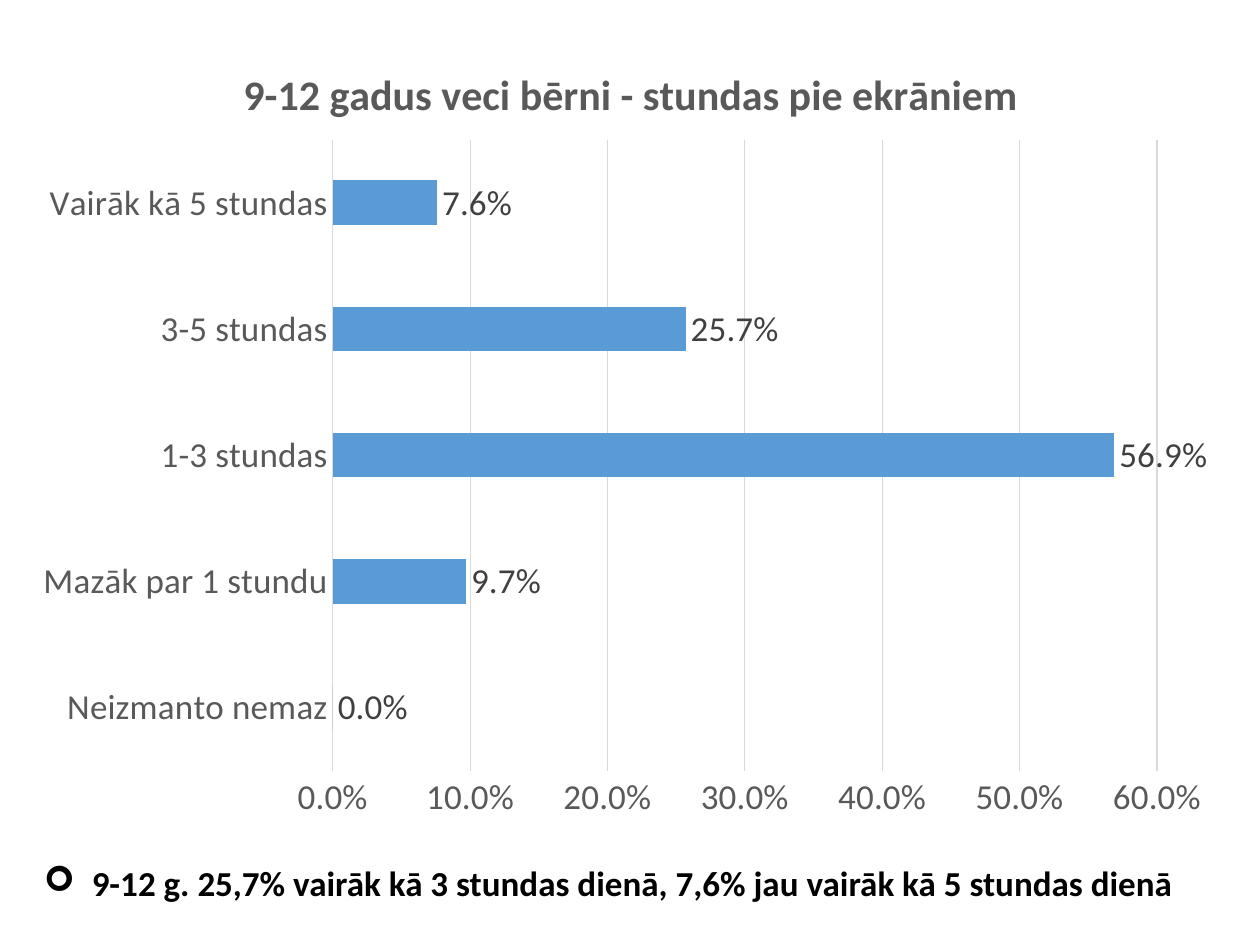
from dataclasses import dataclass

from lxml import etree
from pptx import Presentation
from pptx import util as u
from pptx.chart.data import CategoryChartData
from pptx.dml.color import RGBColor
from pptx.enum import chart as ch
from pptx.enum import text
from pptx.oxml import parse_xml
from pptx.oxml.ns import nsdecls, qn


@dataclass(frozen=True)
class Theme:
    face: str = "Calibri"
    head: int = 24
    body: int = 20
    ink: str = "000000"
    gray: str = "595959"
    dark: str = "404040"
    rule: str = "D9D9D9"
    bar: str = "5B9BD5"


class Deck:
    """Holds the style and the current slide."""

    def __init__(self, slide, theme):
        self.slide = slide
        self.theme = theme

    def style(self, font, size, color, bold=False):
        font.name = self.theme.face
        font.size = u.Pt(size)
        font.bold = bold
        font.color.rgb = RGBColor.from_string(color)

    def rule(self, line):
        line.color.rgb = RGBColor.from_string(self.theme.rule)
        line.width = u.Pt(0.75)

    def place(self, part, **spots):
        """Give a chart title or plot area a manual layout."""
        for old in part.findall(qn("c:layout")):
            part.remove(old)
        tags = "".join(f'<c:{k} val="{v}"/>' for k, v in spots.items())
        node = parse_xml(f'<c:layout {nsdecls("c")}><c:manualLayout>'
                         f"{tags}</c:manualLayout></c:layout>")
        prior = part.find(qn("c:tx"))
        part.insert(0 if prior is None else 1, node)

    def bars(self, box, title, rows, form):
        t = self.theme
        data = CategoryChartData(number_format=form)
        data.categories = [name for name, _ in rows]
        data.add_series("Series 1", [val for _, val in rows])
        chart = self.slide.shapes.add_chart(
            ch.XL_CHART_TYPE.BAR_CLUSTERED, *map(u.Inches, box), data).chart
        self.style(chart.font, t.body, t.ink)
        chart.has_legend = False

        # Title
        run = chart.chart_title.text_frame.paragraphs[0].add_run()
        run.text = title
        self.style(run.font, t.head, t.gray, True)
        root = chart.chart_title._element
        self.place(root, xMode="edge", yMode="edge", x=0.18, y=0.04)

        # Axes
        cat, val = chart.category_axis, chart.value_axis
        for axis in (cat, val):
            axis.major_tick_mark = ch.XL_TICK_MARK.NONE
            axis.minor_tick_mark = ch.XL_TICK_MARK.NONE
            self.style(axis.tick_labels.font, t.body, t.gray)
        self.rule(cat.format.line)
        val.format.line.fill.background()
        val.minimum_scale, val.maximum_scale, val.major_unit = 0, 0.6, 0.1
        val.has_major_gridlines = True
        self.rule(val.major_gridlines.format.line)
        val.tick_labels.number_format = form
        val.tick_labels.number_format_is_linked = False

        # Bars and their labels
        plot = chart.plots[0]
        plot.gap_width = 182
        plot.vary_by_categories = False
        fill = plot.series[0].format.fill
        fill.solid()
        fill.fore_color.rgb = RGBColor.from_string(t.bar)
        tags = plot.series[0].data_labels
        tags.show_value = True
        tags.position = ch.XL_LABEL_POSITION.OUTSIDE_END
        tags.number_format = form
        tags.number_format_is_linked = False
        self.style(tags.font, t.body, t.dark)
        area = chart._chartSpace.chart.plotArea
        self.place(area, layoutTarget="inner", xMode="edge", yMode="edge",
                   x=0.26, y=0.14, w=0.68, h=0.78)

    def note(self, box, words):
        t = self.theme
        frame = self.slide.shapes.add_textbox(*map(u.Inches, box)).text_frame
        frame.word_wrap = True
        frame.auto_size = text.MSO_AUTO_SIZE.SHAPE_TO_FIT_TEXT
        para = frame.paragraphs[0]
        run = para.add_run()
        run.text = words
        self.style(run.font, t.body, t.ink, True)
        # Hanging arrow bullet
        props = para._p.get_or_add_pPr()
        hang = u.Inches(0.38)
        props.set("marL", str(hang))
        props.set("indent", str(-hang))
        etree.SubElement(props, qn("a:buFont")).set("typeface", "Wingdings")
        etree.SubElement(props, qn("a:buChar")).set("char", "➢")


def main():
    prs = Presentation()
    prs.slide_width, prs.slide_height = u.Inches(10), u.Inches(7.5)
    deck = Deck(prs.slides.add_slide(prs.slide_layouts[6]), Theme())

    # Screen time chart
    hours = [
        ("Neizmanto nemaz", 0),
        ("Mazāk par 1 stundu", 0.097),
        ("1-3 stundas", 0.569),
        ("3-5 stundas", 0.257),
        ("Vairāk kā 5 stundas", 0.076),
    ]
    deck.bars((0.14, 0.21, 9.62, 6.42),
              "9-12 gadus veci bērni - stundas pie ekrāniem", hours, "0.0%")

    # Takeaway
    deck.note((0.25, 6.79, 9.75, 0.44),
              "9-12 g. 25,7% vairāk kā 3 stundas dienā, "
              "7,6% jau vairāk kā 5 stundas dienā")
    prs.save("out.pptx")


if __name__ == "__main__":
    main()
